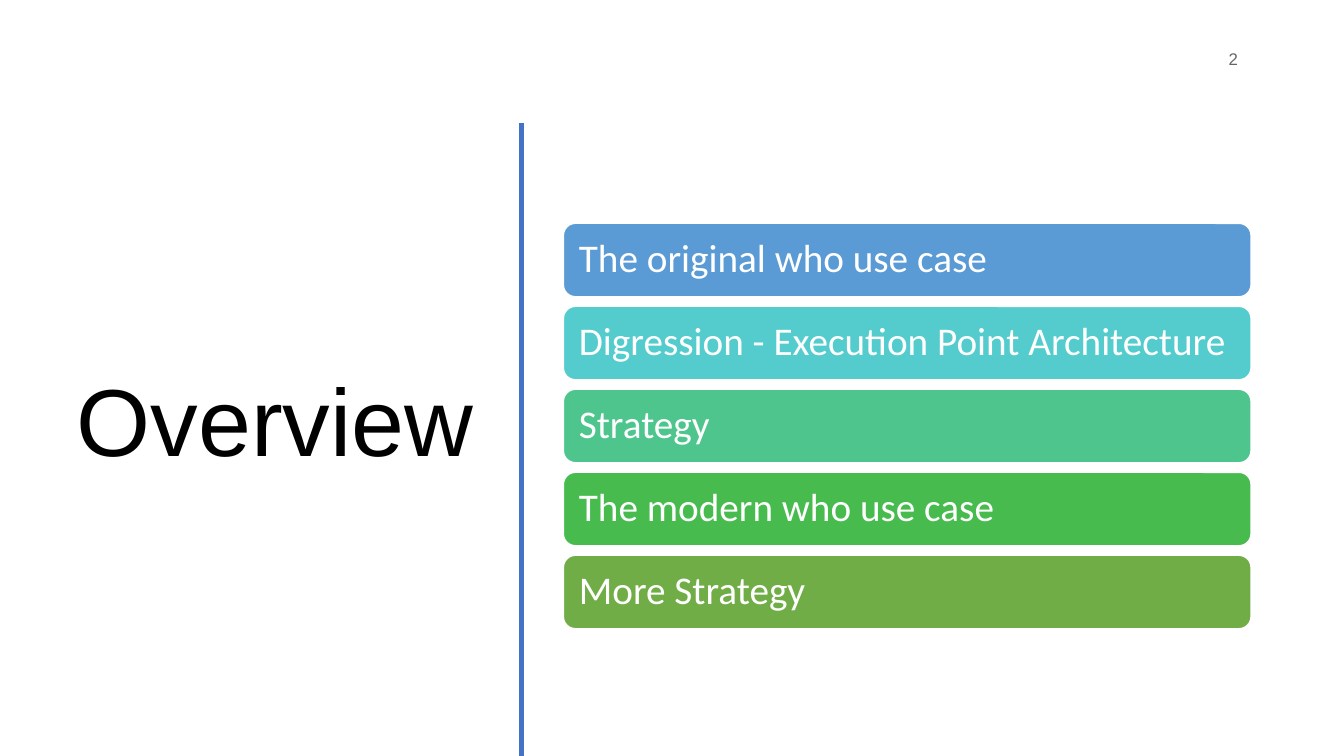
from dataclasses import dataclass

from lxml import etree
from pptx import Presentation
from pptx.dml.color import RGBColor
from pptx.enum.shapes import MSO_CONNECTOR, MSO_SHAPE
from pptx.enum.text import MSO_ANCHOR, PP_ALIGN
from pptx.oxml.ns import qn
from pptx.util import Inches, Pt

ROUND = MSO_SHAPE.ROUNDED_RECTANGLE
STRAIGHT = MSO_CONNECTOR.STRAIGHT
MIDDLE, BOTTOM = MSO_ANCHOR.MIDDLE, MSO_ANCHOR.BOTTOM
LEFT, RIGHT = PP_ALIGN.LEFT, PP_ALIGN.RIGHT


@dataclass(frozen=True)
class Theme:
    white: str = "FFFFFF"
    black: str = "000000"
    gray: str = "666666"
    rule: str = "4472C4"
    bars: tuple = ("5B9BD5", "54CCCD", "4DC58D", "48BB4F", "70AD47")
    head: str = "Arial"
    body: str = "Calibri"
    title: int = 51
    item: int = 21
    page: int = 9


theme = Theme()


def rgb(code):
    return RGBColor.from_string(code)


def write(shape, text, anchor, align, face, size, color):
    """Fill a shape with one styled paragraph and return the paragraph."""
    frame = shape.text_frame
    frame.word_wrap = True
    frame.vertical_anchor = anchor
    para = frame.paragraphs[0]
    para.text = text
    para.alignment = align
    para.line_spacing = 0.9
    para.font.name = face
    para.font.size = Pt(size)
    para.font.color.rgb = rgb(color)
    return para


deck = Presentation()
deck.slide_width = Inches(10)
deck.slide_height = Inches(10 * 9 / 16)
slide = deck.slides.add_slide(deck.slide_layouts[6])
shapes = slide.shapes

# Agenda bars, evenly spread from the first top to the last
items = [
    "The original who use case",
    "Digression - Execution Point Architecture",
    "Strategy",
    "The modern who use case",
    "More Strategy",
]
first, last = 1.66, 4.13
pitch = (last - first) / (len(items) - 1)
for row, (text, color) in enumerate(zip(items, theme.bars)):
    bar = shapes.add_shape(ROUND, Inches(4.19), Inches(first + row * pitch),
                           Inches(5.12), Inches(0.55))
    bar.shadow.inherit = False
    bar.fill.solid()
    bar.fill.fore_color.rgb = rgb(color)
    bar.line.color.rgb = rgb(theme.white)
    bar.line.width = Pt(1)
    frame = bar.text_frame
    frame.margin_left = frame.margin_right = Inches(0.09)
    frame.margin_top = frame.margin_bottom = Inches(0.09)
    write(bar, text, MIDDLE, LEFT, theme.body, theme.item, theme.white)

# Title and page number
title = shapes.add_textbox(Inches(0.39), Inches(0.88), Inches(3.23), Inches(4.58))
write(title, "Overview", MIDDLE, RIGHT, theme.head, theme.title, theme.black)

page = shapes.add_textbox(Inches(7.06), Inches(0.26), Inches(2.25), Inches(0.3))
para = write(page, "2", BOTTOM, RIGHT, theme.head, theme.page, theme.gray)
para.line_spacing = 1.0
para.space_after = Pt(6)

# Divider with square ends
rule = shapes.add_connector(STRAIGHT, Inches(3.88), Inches(0.93),
                            Inches(3.88), Inches(5.62))
rule.line.color.rgb = rgb(theme.rule)
rule.line.width = Pt(2.25)
rule.line._ln.set("cap", "sq")
etree.SubElement(rule._element.spPr, qn("a:effectLst"))

deck.save("out.pptx")
